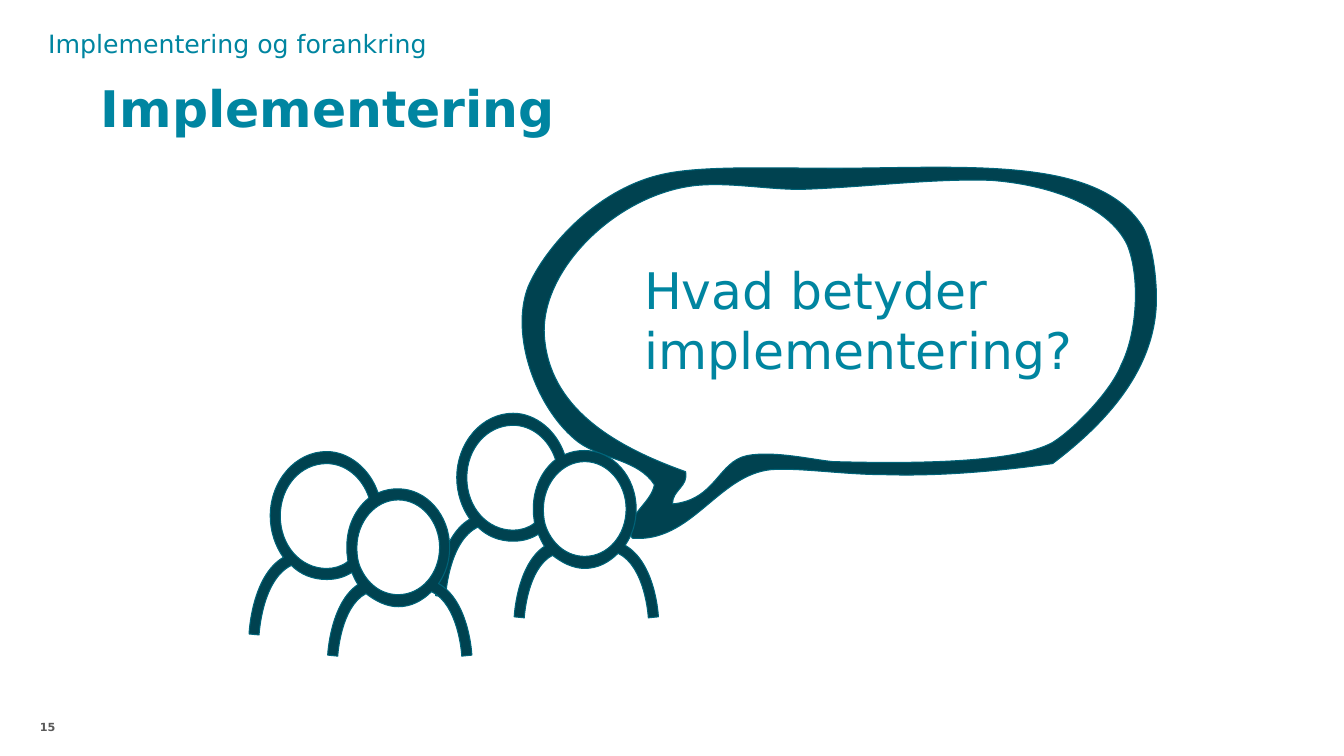
import pptx
import pptx.util
import pptx.dml.color
import pptx.enum.text
import pptx.oxml.ns

PX = 9144  # EMU in one px, 100 px to the inch
FONT = "DejaVu Sans"
COLORS = {
    "title": "0085A1",
    "text": "0085A0",
    "number": "595959",
    "ink": "004250",
    "edge": "006479",
}
ALIGN = pptx.enum.text.PP_ALIGN
ANCHOR = pptx.enum.text.MSO_ANCHOR
FIT = pptx.enum.text.MSO_AUTO_SIZE

# Each contour is a start point followed by triples of curve points, in px
BUBBLE = [
    [(627, 534), (617, 513), (646, 500), (649, 481),
     (633, 456), (598, 456), (574, 439), (532, 407), (505, 332), (524, 284),
     (540, 247), (590, 188), (657, 173), (696, 164), (768, 167), (832, 167),
     (967, 166), (1091, 156), (1134, 226), (1144, 245), (1147, 277), (1147, 296),
     (1147, 366), (1097, 420), (1044, 460), (1001, 466), (938, 473), (877, 471),
     (837, 471), (794, 464), (765, 466), (712, 471), (686, 539), (627, 534)],
    [(741, 452), (768, 447), (805, 456), (826, 458),
     (900, 460), (1006, 460), (1044, 439), (1065, 426), (1102, 388), (1112, 362),
     (1128, 330), (1131, 275), (1118, 243), (1099, 203), (1038, 183), (983, 179),
     (924, 177), (858, 186), (794, 188), (760, 188), (725, 181), (691, 184),
     (612, 192), (535, 268), (540, 334), (545, 402), (604, 441), (680, 468),
     (683, 483), (667, 486), (667, 500), (710, 496), (712, 458), (741, 452)],
]
PAIR = [
    # Outline of both people
    [(620, 541), (627, 531), (631, 519), (631, 505),
     (631, 473), (608, 447), (580, 447), (573, 447), (567, 448), (560, 451),
     (552, 427), (531, 410), (509, 410), (478, 410), (453, 439), (453, 474),
     (453, 489), (458, 504), (466, 515), (435, 533), (432, 589), (432, 591),
     (442, 592), (442, 592), (442, 592), (442, 591), (445, 537), (474, 523),
     (483, 532), (495, 537), (509, 537), (518, 537), (526, 535), (534, 530),
     (536, 535), (538, 539), (540, 542), (513, 560), (510, 610), (510, 612),
     (520, 613), (520, 613), (520, 613), (520, 612), (523, 564), (548, 551),
     (557, 558), (568, 564), (580, 564), (593, 564), (604, 558), (613, 549),
     (640, 562), (643, 612), (643, 613), (653, 612), (653, 612), (653, 612),
     (653, 610), (650, 558), (620, 541)],
    # Inside of the rear head
    [(529, 508), (529, 512), (530, 516), (530, 519),
     (524, 524), (516, 526), (509, 526), (483, 526), (463, 503), (463, 474),
     (463, 445), (483, 422), (509, 422), (527, 422), (544, 435), (551, 456),
     (537, 467), (529, 485), (529, 504), (529, 505), (529, 507), (529, 508)],
    # Inside of the front head
    [(580, 552), (563, 552), (549, 541), (542, 524),
     (540, 519), (539, 514), (539, 505),
     (539, 480), (557, 458), (580, 458), (603, 458), (621, 480), (621, 505),
     (621, 531), (603, 552), (580, 552)],
]


def rgb(name):
    return pptx.dml.color.RGBColor.from_string(COLORS[name])


def write(tf, text, size, color, bold=False, align=ALIGN.LEFT,
          anchor=ANCHOR.TOP, fit=FIT.NONE, margin=None, spacing=None):
    tf.word_wrap = True
    tf.auto_size = fit
    tf.vertical_anchor = anchor
    if margin is not None:
        tf.margin_left = tf.margin_right = margin * PX
        tf.margin_top = tf.margin_bottom = margin * PX
    p = tf.paragraphs[0]
    p.alignment = align
    p.line_spacing = spacing
    r = p.add_run()
    r.text = text
    r.font.name = FONT
    r.font.size = pptx.util.Pt(size)
    r.font.bold = bold
    r.font.color.rgb = rgb(color)


def add_text(s, box, text, **fmt):
    sp = s.shapes.add_textbox(*(v * PX for v in box))
    write(sp.text_frame, text, **fmt)


def add_title(s, box, text, **fmt):
    sp = s.shapes.title
    sp.left, sp.top, sp.width, sp.height = (v * PX for v in box)
    write(sp.text_frame, text, **fmt)


def curve_lines(sp):
    """Join every three line segments into one cubic curve."""
    lines = list(sp._element.iter(pptx.oxml.ns.qn("a:lnTo")))
    for first, second, third in zip(lines[::3], lines[1::3], lines[2::3]):
        first.tag = pptx.oxml.ns.qn("a:cubicBezTo")
        for line in (second, third):
            first.append(line[0])
            line.getparent().remove(line)


def add_drawing(s, contours, dx=0, dy=0):
    builder = None
    for contour in contours:
        start, *rest = [(x + dx, y + dy) for x, y in contour]
        if builder is None:
            builder = s.shapes.build_freeform(*start, scale=PX)
        else:
            builder.move_to(*start)
        builder.add_line_segments(rest, close=True)
    sp = builder.convert_to_shape()
    curve_lines(sp)
    sp.shadow.inherit = False
    sp.fill.solid()
    sp.fill.fore_color.rgb = rgb("ink")
    sp.line.color.rgb = rgb("edge")
    sp.line.width = pptx.util.Pt(0.75)


def main():
    prs = pptx.Presentation()
    prs.slide_width, prs.slide_height = 1333 * PX, 750 * PX
    s = prs.slides.add_slide(prs.slide_layouts[5])

    # Headings and slide number
    add_text(s, (16, 715, 39, 35), "15", size=8, color="number", bold=True,
             align=ALIGN.RIGHT, margin=0)
    add_title(s, (100, 19, 1055, 118), "Implementering", size=36, color="title",
              bold=True, anchor=ANCHOR.BOTTOM, margin=0, spacing=0.9)
    add_text(s, (38, 23, 667, 40), "Implementering og forankring", size=18,
             color="text", fit=FIT.SHAPE_TO_FIT_TEXT)

    # Speech bubble and the two pairs of people
    add_drawing(s, BUBBLE)
    add_drawing(s, PAIR)
    add_drawing(s, PAIR, dx=-185, dy=38)

    # Question in the bubble
    add_text(s, (629, 252, 553, 131), "Hvad betyder implementering?", size=36,
             color="text", fit=FIT.SHAPE_TO_FIT_TEXT)

    prs.save("out.pptx")


if __name__ == "__main__":
    main()
